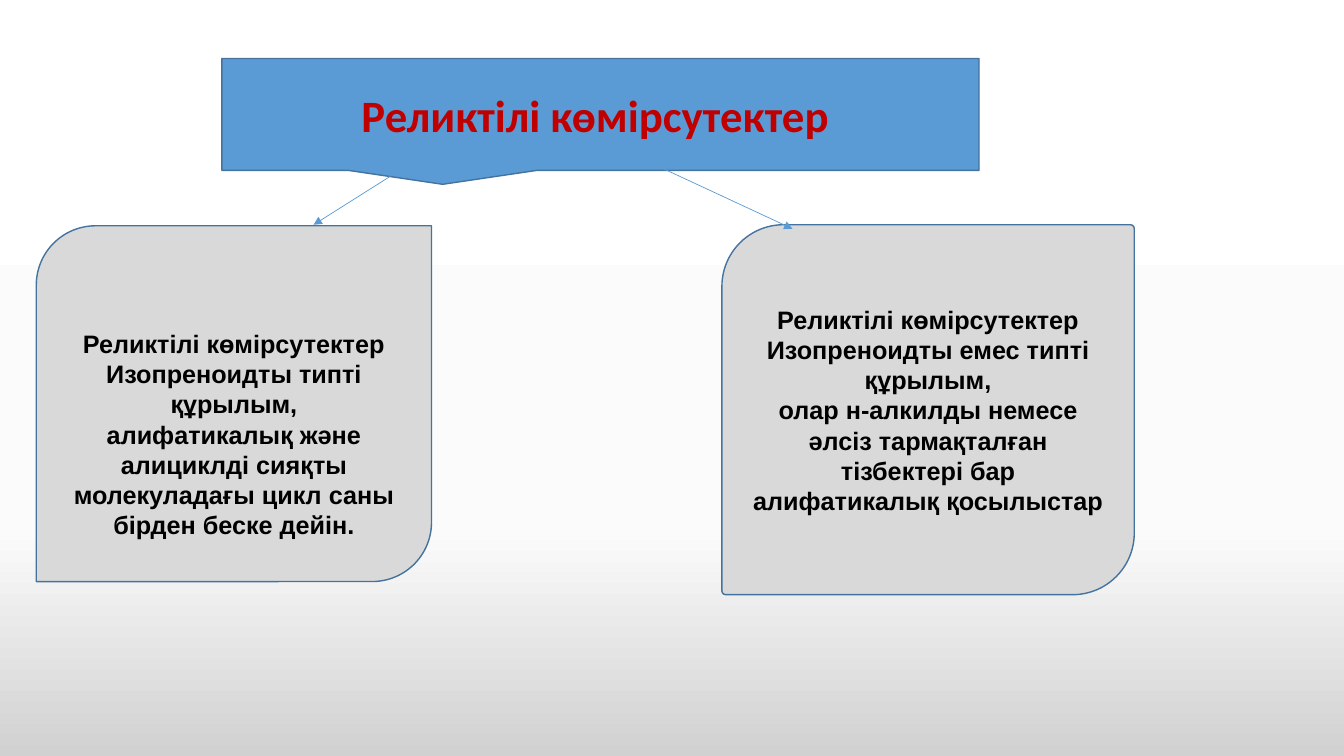
from dataclasses import dataclass

from lxml import etree
from pptx import Presentation
from pptx.dml.color import RGBColor
from pptx.enum.shapes import MSO_CONNECTOR, MSO_SHAPE
from pptx.enum.text import MSO_ANCHOR, MSO_AUTO_SIZE, PP_ALIGN
from pptx.oxml.ns import qn
from pptx.util import Inches, Pt

CALLOUT = MSO_SHAPE.RECTANGULAR_CALLOUT
LEAF = MSO_SHAPE.ROUND_2_DIAG_RECTANGLE
STRAIGHT = MSO_CONNECTOR.STRAIGHT
CENTER = PP_ALIGN.CENTER
MIDDLE = MSO_ANCHOR.MIDDLE
NO_FIT = MSO_AUTO_SIZE.NONE
TITLE_ONLY = 5


@dataclass(frozen=True)
class Theme:
    """Colours, fonts and type sizes of the slide."""
    blue: str = "5B9BD5"
    edge: str = "43739E"
    gray: str = "D9D9D9"
    red: str = "C00000"
    black: str = "000000"
    fade: tuple = ((0, "FFFFFF"), (70, "FBFBFB"), (100, "D1D1D1"))
    head_font: str = "Calibri"
    body_font: str = "Arial"
    head_size: int = 32
    body_size: int = 18


THEME = Theme()


def paint_back(slide):
    """Fill the background with a vertical three-stop gradient."""
    fill = slide.background.fill
    fill.gradient()
    fill.gradient_angle = 270
    stops = slide.element.find(".//" + qn("a:gsLst"))
    stops.clear()
    for place, color in THEME.fade:
        stop = etree.SubElement(stops, qn("a:gs"), pos=str(place * 1000))
        etree.SubElement(stop, qn("a:srgbClr"), val=color)


def add_form(slide, kind, box, color):
    """Add a filled and outlined preset shape in the box."""
    form = slide.shapes.add_shape(kind, *map(Inches, box))
    form.shadow.inherit = False
    form.fill.solid()
    form.fill.fore_color.rgb = RGBColor.from_string(color)
    form.line.color.rgb = RGBColor.from_string(THEME.edge)
    form.line.width = Pt(1)
    return form


def write(frame, lines, font, size, color):
    """Write bold centred lines into a text frame."""
    frame.word_wrap = True
    frame.auto_size = NO_FIT
    frame.vertical_anchor = MIDDLE
    for i, line in enumerate(lines):
        para = frame.add_paragraph() if i else frame.paragraphs[0]
        para.alignment = CENTER
        para.line_spacing = 1.0
        para.space_before = Pt(0)
        run = para.add_run()
        run.text = line
        run.font.name = font
        run.font.size = Pt(size)
        run.font.bold = True
        run.font.color.rgb = RGBColor.from_string(color)


def add_head(slide, box, text):
    """Place the title over a callout in the box."""
    add_form(slide, CALLOUT, box, THEME.blue)
    title = slide.shapes.title
    title.left, title.top, title.width, title.height = map(Inches, box)
    title.element.getparent().append(title.element)
    title.text_frame.margin_right = Inches(0.2)
    write(title.text_frame, [text], THEME.head_font, THEME.head_size, THEME.red)


def add_card(slide, box, lines, drop=0, notch=0):
    """Add a gray card whose text sits lower by half of the drop."""
    card = add_form(slide, LEAF, box, THEME.gray)
    card.adjustments[1] = notch
    card.text_frame.margin_top = Inches(0.05 + drop)
    write(card.text_frame, lines, THEME.body_font, THEME.body_size, THEME.black)


def add_arrow(slide, start, end):
    """Draw a thin arrow from start to end."""
    arrow = slide.shapes.add_connector(STRAIGHT, *map(Inches, start + end))
    arrow.line.color.rgb = RGBColor.from_string(THEME.blue)
    arrow.line.width = Pt(0.5)
    line = arrow.line._get_or_add_ln()
    etree.SubElement(line, qn("a:tailEnd"), type="triangle")
    etree.SubElement(arrow.element.spPr, qn("a:effectLst"))


def main():
    """Build the slide and save it."""
    deck = Presentation()
    deck.slide_width, deck.slide_height = Inches(13.33), Inches(7.5)
    slide = deck.slides.add_slide(deck.slide_layouts[TITLE_ONLY])
    paint_back(slide)
    add_head(slide, (2.2, 0.58, 7.51, 1.11), "Реликтілі көмірсутектер")
    add_card(slide, (0.36, 2.24, 3.92, 3.53), [
        "Реликтілі көмірсутектер",
        "Изопреноидты типті құрылым,",
        "алифатикалық және алициклді сияқты молекуладағы цикл саны "
        "бірден беске дейін.",
    ], drop=0.6)
    add_card(slide, (7.16, 2.23, 4.09, 3.67), [
        "Реликтілі көмірсутектер",
        "Изопреноидты емес типті құрылым,",
        "олар н-алкилды немесе әлсіз тармақталған тізбектері бар "
        "алифатикалық қосылыстар",
    ], notch=0.01)
    add_arrow(slide, (6.12, 1.46), (7.86, 2.27))
    add_arrow(slide, (3.87, 1.75), (3.11, 2.23))
    deck.save("out.pptx")


if __name__ == "__main__":
    main()
